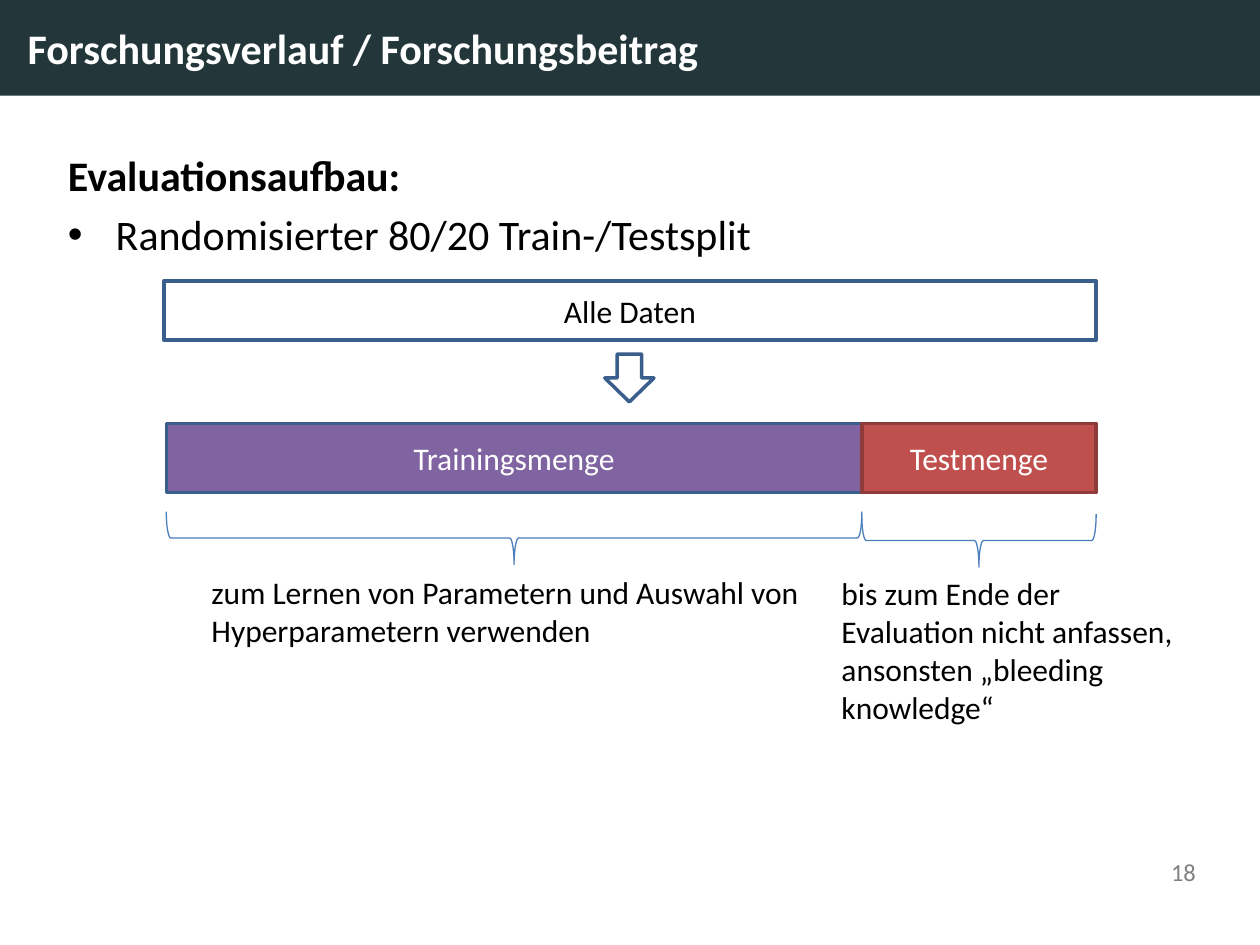
from dataclasses import dataclass

from lxml import etree
from pptx import Presentation
from pptx import util as u
from pptx.dml.color import RGBColor
from pptx.enum import shapes, text
from pptx.oxml import ns

CELL = u.Inches(0.1)
COLUMNS, ROWS = 100, 75


@dataclass(frozen=True)
class Theme:
    font: str = "Calibri"
    heading: int = 24
    label: int = 18
    small: int = 14
    outline: float = 2
    brace_line: float = 0.75
    banner: str = "23373B"
    white: str = "FFFFFF"
    black: str = "000000"
    grey: str = "808080"
    blue: str = "3A5F8C"
    brace: str = "4B7EBC"
    purple: str = "8064A2"
    red: str = "C0504D"
    dark_red: str = "8E3B39"


THEME = Theme()
KIND = shapes.MSO_SHAPE
ALIGN = text.PP_ALIGN
ANCHOR = text.MSO_ANCHOR


def grid(*cells):
    return [round(cell * CELL) for cell in cells]


def style(paragraph, size, color, bold=False, align=ALIGN.LEFT):
    paragraph.alignment = align
    for run in paragraph.runs:
        run.font.name = THEME.font
        run.font.size = u.Pt(size)
        run.font.bold = bold
        run.font.color.rgb = RGBColor.from_string(color)


def add_block(slide, kind, area, fill=None, line=None, width=THEME.outline):
    block = slide.shapes.add_shape(kind, *grid(*area))
    block.shadow.inherit = False
    if fill:
        block.fill.solid()
        block.fill.fore_color.rgb = RGBColor.from_string(fill)
    else:
        block.fill.background()
    if line:
        block.line.color.rgb = RGBColor.from_string(line)
        block.line.width = u.Pt(width)
    else:
        block.line.fill.background()
    return block


def add_bar(slide, area, label, fill, line, color):
    frame = add_block(slide, KIND.RECTANGLE, area, fill, line).text_frame
    frame.vertical_anchor = ANCHOR.MIDDLE
    frame.text = label
    style(frame.paragraphs[0], THEME.label, color, align=ALIGN.CENTER)


def add_brace(slide, left, top, span, depth=4.2):
    area = (left + (span - depth) / 2, top + (depth - span) / 2, depth, span)
    brace = add_block(slide, KIND.LEFT_BRACE, area, line=THEME.brace, width=THEME.brace_line)
    brace.rotation = 270


def add_text(slide, area, content, size, color, bold=False, align=ALIGN.LEFT, anchor=ANCHOR.TOP):
    frame = slide.shapes.add_textbox(*grid(*area)).text_frame
    frame.word_wrap = True
    frame.vertical_anchor = anchor
    frame.text = content
    style(frame.paragraphs[0], size, color, bold, align)
    return frame


def add_bullet(frame, content, indent):
    point = frame.add_paragraph()
    point.text = content
    properties = point._p.get_or_add_pPr()
    properties.set("marL", str(u.Inches(indent)))
    properties.set("indent", str(-u.Inches(indent)))
    etree.SubElement(properties, ns.qn("a:buFont"), typeface="Arial")
    etree.SubElement(properties, ns.qn("a:buChar"), char="•")
    point.space_before = u.Pt(0.2 * THEME.heading)
    style(point, THEME.heading, THEME.black)


def add_split(slide):
    left, right, border = 13.2, 87, 68.4
    parts = [
        (left, border, "Trainingsmenge", THEME.purple, THEME.blue, 40.6),
        (border, right, "Testmenge", THEME.red, THEME.dark_red, 40.8),
    ]
    for start, end, label, fill, line, brace_top in parts:
        add_bar(slide, (start, 33.6, end - start, 5.5), label, fill, line, THEME.white)
        add_brace(slide, start, brace_top, end - start)
    add_bar(slide, (13, 22.3, 74, 4.7), "Alle Daten", THEME.white, THEME.blue, THEME.black)
    add_block(slide, KIND.DOWN_ARROW, (48, 28.1, 3.9, 3.8), THEME.white, THEME.blue)


def main():
    deck = Presentation()
    deck.slide_width, deck.slide_height = COLUMNS * CELL, ROWS * CELL
    slide = deck.slides.add_slide(deck.slide_layouts[6])

    add_block(slide, KIND.RECTANGLE, (0, 0, COLUMNS, 7.6), THEME.banner)
    add_text(slide, (1.2, 1, 98.8, 5.6), "Forschungsverlauf / Forschungsbeitrag",
             THEME.heading, THEME.white, bold=True, anchor=ANCHOR.MIDDLE)
    setup = add_text(slide, (4.4, 11.4, 91.5, 56.1), "Evaluationsaufbau:",
                     THEME.heading, THEME.black, bold=True)
    add_bullet(setup, "Randomisierter 80/20 Train-/Testsplit", 0.38)
    add_split(slide)

    usages = [
        ((15.8, 45, 49.9, 7.1),
         "zum Lernen von Parametern und Auswahl von Hyperparametern verwenden"),
        ((65.8, 45.1, 30.1, 13.1),
         "bis zum Ende der Evaluation nicht anfassen, ansonsten „bleeding knowledge“"),
    ]
    for area, usage in usages:
        add_text(slide, area, usage, THEME.label, THEME.black)
    add_text(slide, (83.3, 67.5, 12.6, 4.2), "18", THEME.small, THEME.grey, align=ALIGN.RIGHT)
    deck.save("out.pptx")


if __name__ == "__main__":
    main()
